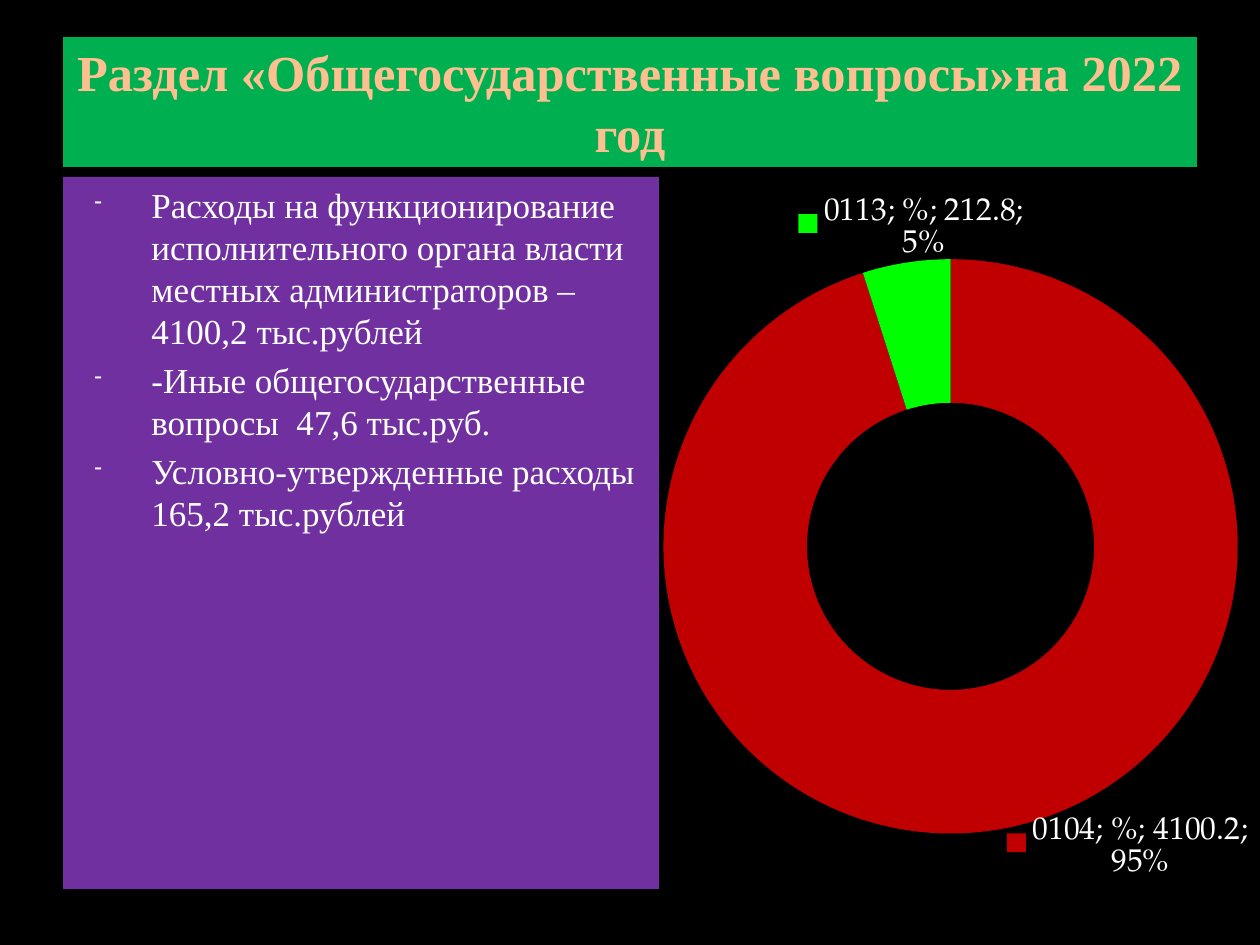
from lxml.etree import SubElement
from pptx import Presentation
from pptx.chart.data import CategoryChartData
from pptx.dml.color import RGBColor
from pptx.enum.chart import XL_CHART_TYPE
from pptx.enum.shapes import MSO_SHAPE
from pptx.enum.text import MSO_ANCHOR, PP_ALIGN
from pptx.oxml import parse_xml
from pptx.oxml.ns import nsdecls, qn
from pptx.util import Pt

PX = 914400 / 126


class Theme:
    back, head, panel = "000000", "00B050", "7030A0"
    peach, white, mark = "FFC091", "FFFFFF", "F9F9F9"
    red, green = "C00000", "00FF00"
    serif, chart = "Times New Roman", "TeX Gyre Pagella"
    title, body, label = Pt(28.8), Pt(20), Pt(18)


TITLE = "Раздел «Общегосударственные вопросы»на 2022 год"
ITEMS = [
    "Расходы на функционирование исполнительного органа власти "
    "местных администраторов – 4100,2 тыс.рублей",
    "-Иные общегосударственные вопросы  47,6 тыс.руб.",
    "Условно-утвержденные расходы 165,2 тыс.рублей",
]
# category, value, colour, label shift as a share of the chart
SLICES = [
    ("0104", 4100.2, Theme.red, (0.23, 0.13)),
    ("0113", 212.8, Theme.green, (-0.01, -0.15)),
]


def px(n):
    return round(n * PX)


def apply(obj, vals):
    for key, val in vals.items():
        setattr(obj, key, val)


def paint(fill, color):
    fill.solid()
    fill.fore_color.rgb = RGBColor.from_string(color)


def style(font, size, color, name, bold=False):
    apply(font, {"size": size, "name": name, "bold": bold})
    paint(font.fill, color)


def place(shape, left, top, width, height):
    apply(shape, {"left": px(left), "top": px(top),
                  "width": px(width), "height": px(height)})


def add_title(slide):
    shape = slide.shapes.title
    place(shape, 63, 37, 1134, 130)
    paint(shape.fill, Theme.head)
    frame = shape.text_frame
    apply(frame, {"text": TITLE, "word_wrap": True,
                  "vertical_anchor": MSO_ANCHOR.MIDDLE})
    para = frame.paragraphs[0]
    para.alignment = PP_ALIGN.CENTER
    style(para.runs[0].font, Theme.title, Theme.peach, Theme.serif, True)


def set_dash(para):
    props = para._p.get_or_add_pPr()
    props.set("marL", str(px(76)))
    props.set("indent", str(px(-57)))
    color = SubElement(props, qn("a:buClr"))
    SubElement(color, qn("a:srgbClr"), val=Theme.mark)
    SubElement(props, qn("a:buSzPct"), val="65000")
    SubElement(props, qn("a:buChar"), char="-")


def add_list(slide):
    box = (px(n) for n in (63, 177, 596, 712))
    shape = slide.shapes.add_shape(MSO_SHAPE.RECTANGLE, *box)
    shape.shadow.inherit = False
    paint(shape.fill, Theme.panel)
    shape.line.fill.background()
    frame = shape.text_frame
    apply(frame, {"word_wrap": True, "vertical_anchor": MSO_ANCHOR.TOP})
    for i, text in enumerate(ITEMS):
        para = frame.add_paragraph() if i else frame.paragraphs[0]
        apply(para, {"text": text, "alignment": PP_ALIGN.LEFT,
                     "space_before": Pt(4)})
        set_dash(para)
        style(para.runs[0].font, Theme.body, Theme.white, Theme.serif)


def layout(inner):
    return f"<c:layout><c:manualLayout>{inner}</c:manualLayout></c:layout>"


def label_xml():
    shows = "".join(
        f'<c:show{part} val="{flag}"/>' for part, flag in
        [("LegendKey", 1), ("Val", 1), ("CatName", 1), ("SerName", 1),
         ("Percent", 1), ("BubbleSize", 0)]) + "<c:separator>; </c:separator>"
    each = "".join(
        f'<c:dLbl><c:idx val="{i}"/>'
        + layout(f'<c:x val="{x}"/><c:y val="{y}"/>') + shows + "</c:dLbl>"
        for i, (_, _, _, (x, y)) in enumerate(SLICES))
    return (f'<c:dLbls {nsdecls("c")}>{each}{shows}'
            '<c:showLeaderLines val="0"/></c:dLbls>')


def plot_xml():
    parts = '<c:layoutTarget val="inner"/>'
    parts += '<c:xMode val="edge"/><c:yMode val="edge"/>'
    for key, val in zip("xywh", (0.01, 0.09, 0.99, 0.83)):
        parts += f'<c:{key} val="{val}"/>'
    return layout(parts).replace("<c:layout>", f'<c:layout {nsdecls("c")}>')


def add_ring(slide):
    data = CategoryChartData()
    data.categories = [row[0] for row in SLICES]
    data.add_series("%", [row[1] for row in SLICES])
    box = (px(n) for n in (635, 197, 625, 692))
    chart = slide.shapes.add_chart(XL_CHART_TYPE.DOUGHNUT, *box, data).chart
    apply(chart, {"has_legend": False, "has_title": False})
    style(chart.font, Theme.label, Theme.white, Theme.chart)
    plot = chart.plots[0]
    plot.vary_by_categories = True
    ring = plot.series[0]
    for i, (_, _, color, _) in enumerate(SLICES):
        form = ring.points[i].format
        paint(form.fill, color)
        form.line.fill.background()
    # Labels go before the categories, as the schema asks
    ring._element.find(qn("c:cat")).addprevious(parse_xml(label_xml()))
    area = chart._chartSpace.find(".//" + qn("c:plotArea"))
    old = area.find(qn("c:layout"))
    if old is not None:
        area.remove(old)
    area.insert(0, parse_xml(plot_xml()))


def main():
    prs = Presentation()
    apply(prs, {"slide_width": px(1260), "slide_height": px(945)})
    slide = prs.slides.add_slide(prs.slide_layouts[5])
    paint(slide.background.fill, Theme.back)
    add_title(slide)
    add_list(slide)
    add_ring(slide)
    prs.save("out.pptx")


if __name__ == "__main__":
    main()
